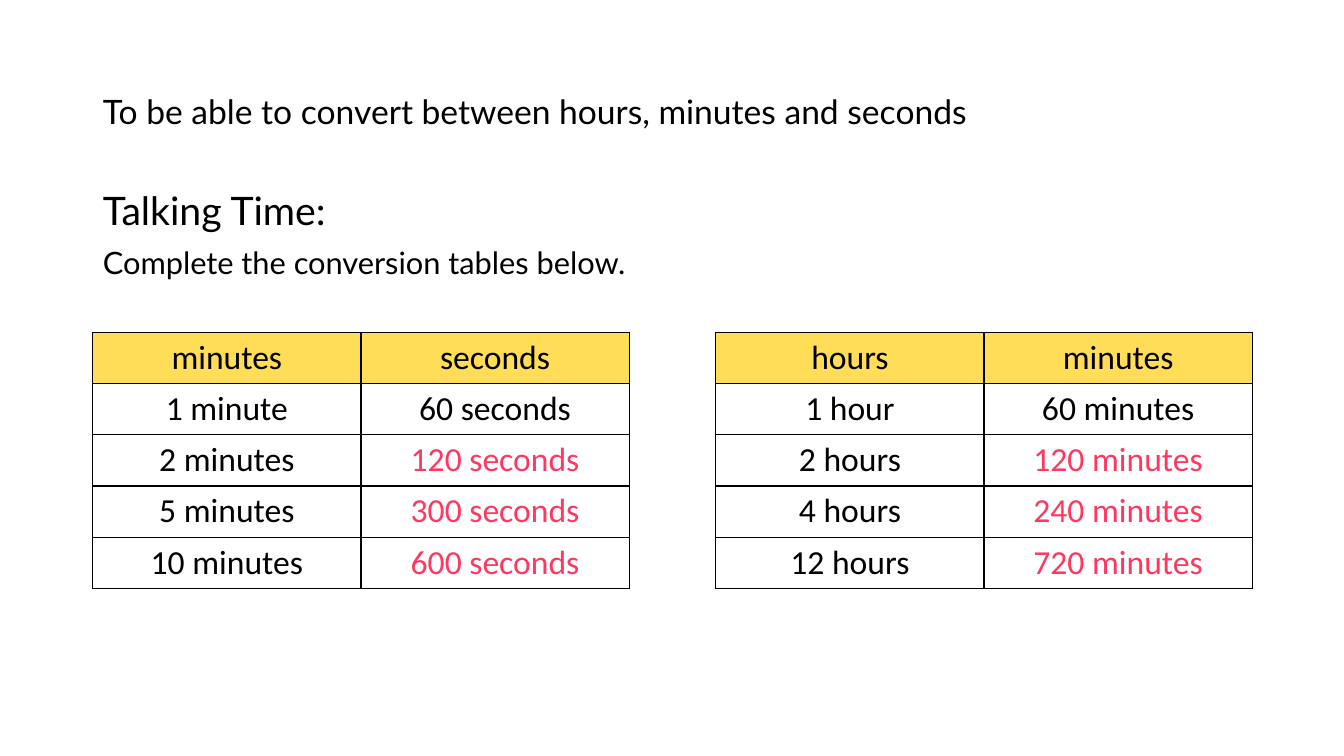
from lxml import etree
from pptx import Presentation
from pptx import util as u
from pptx.dml.color import RGBColor
from pptx.enum import text
from pptx.oxml import ns

OBJECTIVE = "To be able to convert between hours, minutes and seconds"
TASK = [("Talking Time:", 28, 0), ("Complete the conversion tables below.", 22, 10)]
CONVERSIONS = [
    [
        ("minutes", "seconds"),
        ("1 minute", "60 seconds"),
        ("2 minutes", "120 seconds"),
        ("5 minutes", "300 seconds"),
        ("10 minutes", "600 seconds"),
    ],
    [
        ("hours", "minutes"),
        ("1 hour", "60 minutes"),
        ("2 hours", "120 minutes"),
        ("4 hours", "240 minutes"),
        ("12 hours", "720 minutes"),
    ],
]
COLORS = {"ink": "000000", "header": "FFDD57", "paper": "FFFFFF", "answer": "FF3860"}
WIDTH, HEIGHT = 13.33, 7.5
LEFT, TABLE_TOP, TABLE_STEP = 0.92, 3.3, 6.18
COLUMN, ROW = 2.66, 0.5
FIRST_ANSWER_ROW = 2
FRAME = {
    "word_wrap": True,
    "auto_size": text.MSO_AUTO_SIZE.NONE,
}


def assign(target, values):
    for name, value in values.items():
        setattr(target, name, value)


def place(part, left, top, width, height):
    assign(part, {
        "left": u.Inches(left), "top": u.Inches(top),
        "width": u.Inches(width), "height": u.Inches(height),
    })


def write(paragraph, words, size, face, color, **layout):
    run = paragraph.add_run()
    run.text = words
    assign(paragraph, layout)
    assign(run.font, {"size": u.Pt(size), "name": face, "bold": False})
    run.font.color.rgb = RGBColor.from_string(COLORS[color])


def outline(cell):
    properties = cell._tc.get_or_add_tcPr()
    for side in ("lnL", "lnR", "lnT", "lnB"):
        border = etree.SubElement(properties, ns.qn(f"a:{side}"), w=str(u.Pt(1)))
        fill = etree.SubElement(border, ns.qn("a:solidFill"))
        etree.SubElement(fill, ns.qn("a:srgbClr"), val=COLORS["ink"])


def add_conversion(slide, rows, left):
    columns = len(rows[0])
    table = slide.shapes.add_table(
        len(rows), columns, u.Inches(left), u.Inches(TABLE_TOP),
        u.Inches(COLUMN * columns), u.Inches(ROW * len(rows)),
    ).table
    assign(table, {"first_row": False, "horz_banding": False})
    for r, row in enumerate(rows):
        for c, words in enumerate(row):
            cell = table.cell(r, c)
            outline(cell)
            cell.fill.solid()
            shade = "header" if r == 0 else "paper"
            cell.fill.fore_color.rgb = RGBColor.from_string(COLORS[shade])
            color = "answer" if c == 1 and r >= FIRST_ANSWER_ROW else "ink"
            write(cell.text_frame.paragraphs[0], words, 24, "Calibri", color,
                  alignment=text.PP_ALIGN.CENTER)


def main():
    deck = Presentation()
    assign(deck, {"slide_width": u.Inches(WIDTH), "slide_height": u.Inches(HEIGHT)})
    slide = deck.slides.add_slide(deck.slide_layouts[1])

    objective, task = slide.placeholders
    place(objective, LEFT, 0.4, 9.6, 1.45)
    place(task, LEFT, 1.85, 12.05, 4.76)
    for part in (objective, task):
        assign(part.text_frame, FRAME)
    objective.text_frame.vertical_anchor = text.MSO_ANCHOR.MIDDLE
    write(objective.text_frame.paragraphs[0], OBJECTIVE, 24, "Lato", "ink",
          alignment=text.PP_ALIGN.LEFT, line_spacing=0.9)

    for index, (words, size, gap) in enumerate(TASK):
        frame = task.text_frame
        paragraph = frame.add_paragraph() if index else frame.paragraphs[0]
        properties = paragraph._p.get_or_add_pPr()
        properties.set("marL", "0")
        properties.set("indent", "0")
        etree.SubElement(properties, ns.qn("a:buNone"))
        write(paragraph, words, size, "Lato", "ink",
              line_spacing=0.9, space_before=u.Pt(gap))

    for index, rows in enumerate(CONVERSIONS):
        add_conversion(slide, rows, LEFT + index * TABLE_STEP)

    deck.save("out.pptx")


if __name__ == "__main__":
    main()
